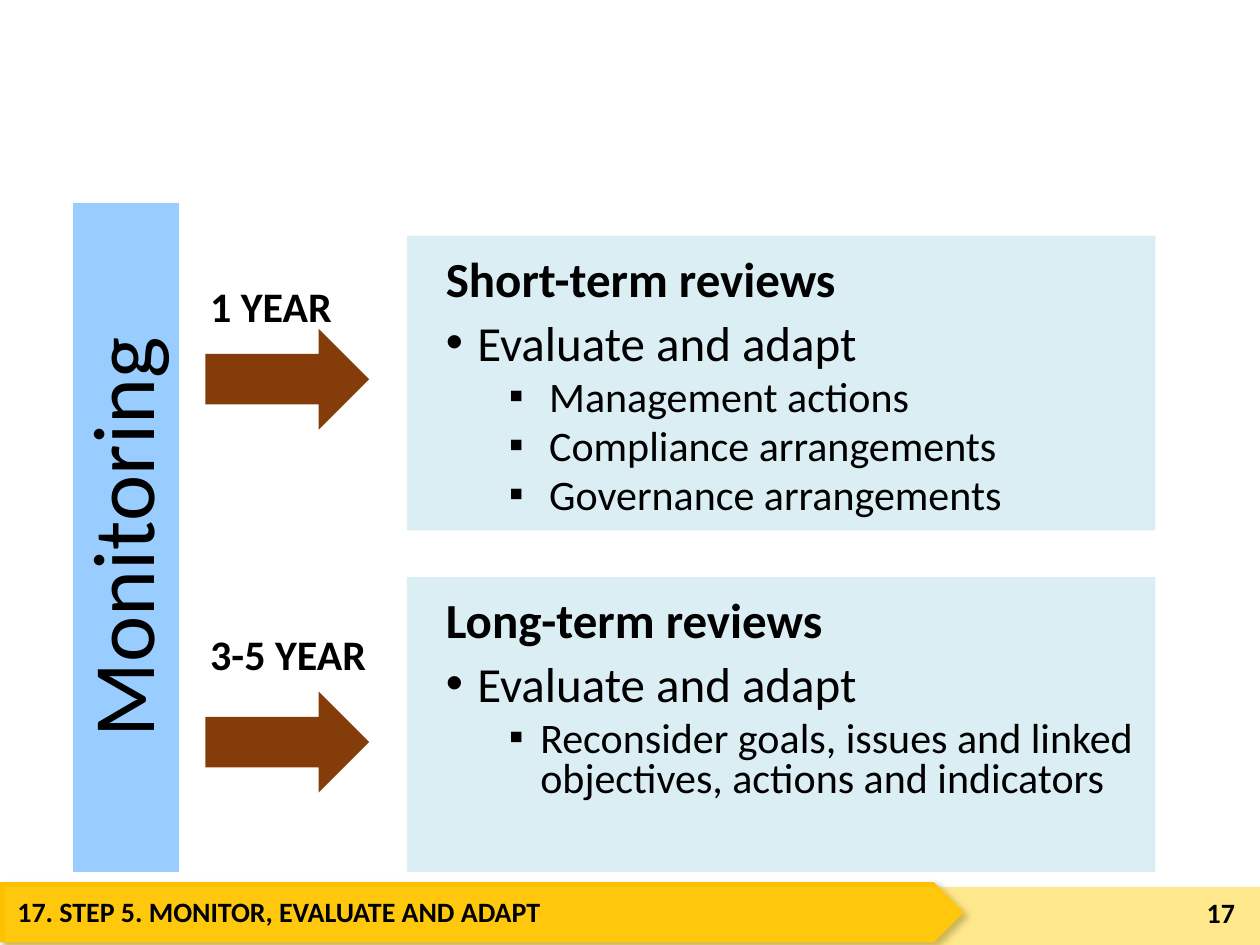
"""Build the monitoring and review slide."""
from lxml import etree
from pptx import Presentation
from pptx.dml.color import RGBColor
from pptx.enum.shapes import MSO_SHAPE
from pptx.enum.text import MSO_ANCHOR, PP_ALIGN
from pptx.oxml.ns import qn
from pptx.util import Inches, Pt

RECTANGLE = MSO_SHAPE.RECTANGLE
PENTAGON = MSO_SHAPE.PENTAGON
RIGHT_ARROW = MSO_SHAPE.RIGHT_ARROW
TOP, MIDDLE = MSO_ANCHOR.TOP, MSO_ANCHOR.MIDDLE
LEFT, CENTER, RIGHT = PP_ALIGN.LEFT, PP_ALIGN.CENTER, PP_ALIGN.RIGHT

FONT = "Calibri"
COLORS = {
    "text": "000000",
    "footer": "FFC000",
    "footer_band": "FFD01B",
    "panel": "DBEEF4",
    "monitoring": "99CCFF",
    "arrow": "843C0B",
}


def write(paragraph, text, size=24, bold=False, align=LEFT, line=None,
          before=0, bullet=None, margin=0, hanging=0):
    """Write formatted text into a paragraph."""
    properties = paragraph._p.get_or_add_pPr()
    if bullet:
        properties.set("marL", str(Inches(margin)))
        properties.set("indent", str(-Inches(hanging)))
        etree.SubElement(properties, qn("a:buFont")).set("typeface", "Arial")
        etree.SubElement(properties, qn("a:buChar")).set("char", bullet)
    paragraph.alignment = align
    paragraph.space_before = Pt(before)
    if line:
        paragraph.line_spacing = line
    run = paragraph.add_run()
    run.text = text
    run.font.name = FONT
    run.font.size = Pt(size)
    run.font.bold = bold
    run.font.color.rgb = RGBColor.from_string(COLORS["text"])


class SlideBuilder:
    """Hold the current slide and draw its elements."""

    def __init__(self, slide):
        self.slide = slide

    def shape(self, kind, left, top, width, height, color, opacity=None):
        """Add a filled shape without an outline."""
        shape = self.slide.shapes.add_shape(
            kind, Inches(left), Inches(top), Inches(width), Inches(height))
        shape.shadow.inherit = False
        shape.fill.solid()
        shape.fill.fore_color.rgb = RGBColor.from_string(COLORS[color])
        shape.line.fill.background()
        if opacity:
            fill_color = shape._element.spPr.find(".//" + qn("a:srgbClr"))
            etree.SubElement(fill_color, qn("a:alpha")).set("val", str(opacity * 1000))
        return shape

    def drop_shadow(self, shape):
        """Give a shape a soft shadow to the lower right."""
        effects = shape._element.spPr.find(qn("a:effectLst"))
        shadow = etree.SubElement(
            effects, qn("a:outerShdw"), blurRad=str(Pt(4)), dist=str(Pt(3)),
            dir="2700000", algn="tl", rotWithShape="0")
        color = etree.SubElement(shadow, qn("a:srgbClr"), val=COLORS["text"])
        etree.SubElement(color, qn("a:alpha"), val="40000")

    def vertical_bar(self, left, top, width, height, text, color):
        """Add a bar whose text reads upwards."""
        shift = (height - width) / 2
        bar = self.shape(RECTANGLE, left - shift, top + shift, height, width, color)
        bar.rotation = 270
        frame = bar.text_frame
        frame.vertical_anchor = MIDDLE
        frame.margin_left = frame.margin_right = Inches(0.03)
        frame.margin_top = frame.margin_bottom = Inches(0.03)
        write(frame.paragraphs[0], text, size=50, align=CENTER, line=0.9)

    def text_box(self, left, top, width, height, paragraphs, anchor=TOP):
        """Add a text box from pairs of text and format."""
        box = self.slide.shapes.add_textbox(
            Inches(left), Inches(top), Inches(width), Inches(height))
        frame = box.text_frame
        frame.word_wrap = True
        frame.vertical_anchor = anchor
        for index, (text, style) in enumerate(paragraphs):
            paragraph = frame.add_paragraph() if index else frame.paragraphs[0]
            write(paragraph, text, **style)


def main():
    """Create and save the presentation."""
    presentation = Presentation()
    presentation.slide_width = Inches(10)
    presentation.slide_height = Inches(7.5)
    slide = presentation.slides.add_slide(presentation.slide_layouts[6])
    builder = SlideBuilder(slide)

    footer = builder.shape(PENTAGON, 0, 7, 7.65, 0.48, "footer")
    builder.drop_shadow(footer)
    builder.shape(RECTANGLE, 0.04, 7.04, 9.96, 0.49, "footer_band", opacity=50)
    footer_style = {"size": 16, "bold": True}
    builder.text_box(0.04, 7.05, 7.35, 0.41,
                     [("17. STEP 5. MONITOR, EVALUATE AND ADAPT", footer_style)])
    builder.text_box(9.17, 7.04, 0.73, 0.4,
                     [("17", {**footer_style, "align": RIGHT})], anchor=MIDDLE)

    builder.vertical_bar(0.58, 1.61, 0.84, 5.31, "Monitoring", "monitoring")
    reviews = [
        ("1 YEAR", 1.87, 2.61, 2.18, 1.43),
        ("3-5 YEAR", 4.58, 5.49, 4.94, 2.2),
    ]
    for label, panel_top, arrow_top, label_top, label_width in reviews:
        builder.shape(RECTANGLE, 3.23, panel_top, 5.94, 2.34, "panel")
        builder.shape(RIGHT_ARROW, 1.63, arrow_top, 1.3, 0.8, "arrow")
        builder.text_box(1.57, label_top, label_width, 0.51, [(label, {"bold": True})])

    heading = {"size": 28, "bold": True, "line": 0.8}
    point = {"size": 28, "line": 0.8, "before": 10,
             "bullet": "•", "margin": 0.25, "hanging": 0.25}
    detail = {"line": 0.8, "before": 5,
              "bullet": "▪", "margin": 0.75, "hanging": 0.25}
    wide_detail = {**detail, "margin": 0.82, "hanging": 0.32}
    builder.text_box(3.44, 2.01, 5.73, 4.81, [
        ("Short-term reviews", heading),
        ("Evaluate and adapt", point),
        ("Management actions", wide_detail),
        ("Compliance arrangements", wide_detail),
        ("Governance arrangements", wide_detail),
        ("Long-term reviews", {**heading, "before": 47}),
        ("Evaluate and adapt", point),
        ("Reconsider goals, issues and linked objectives, actions and indicators",
         detail),
    ])
    presentation.save("out.pptx")


if __name__ == "__main__":
    main()
